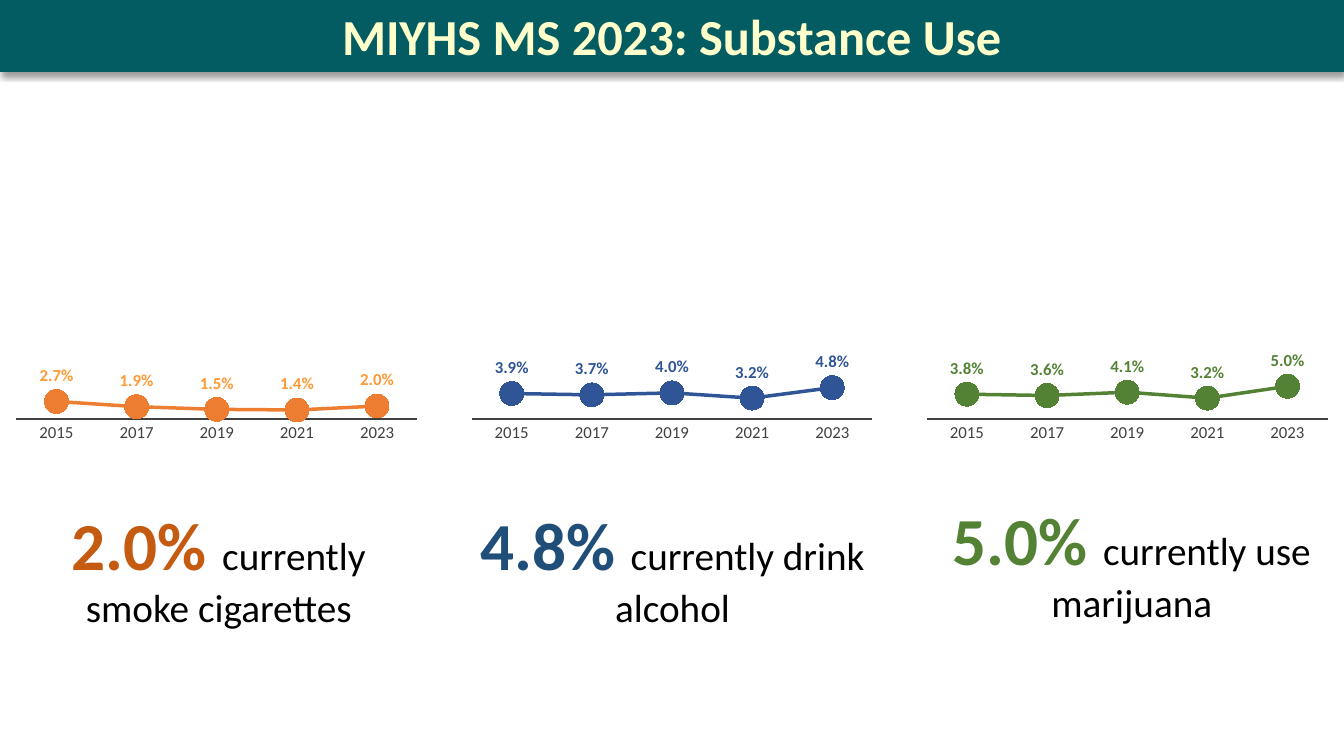
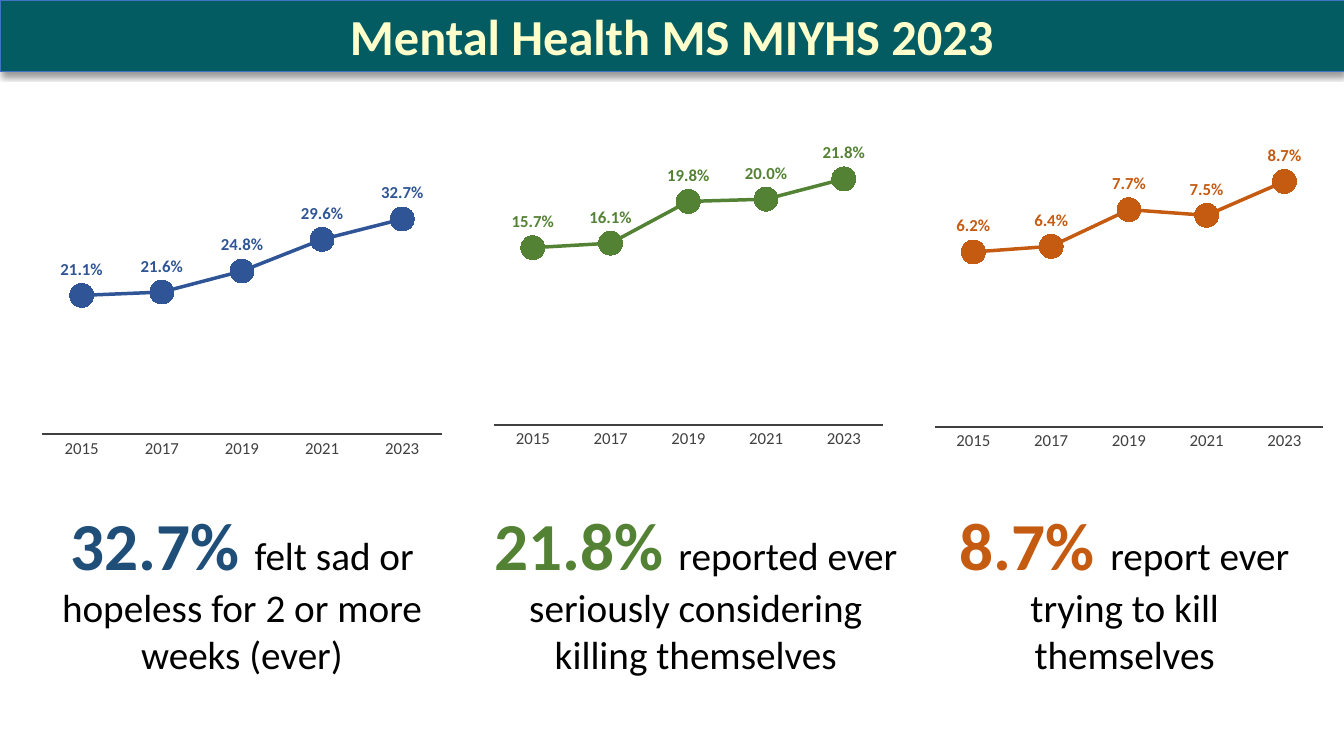
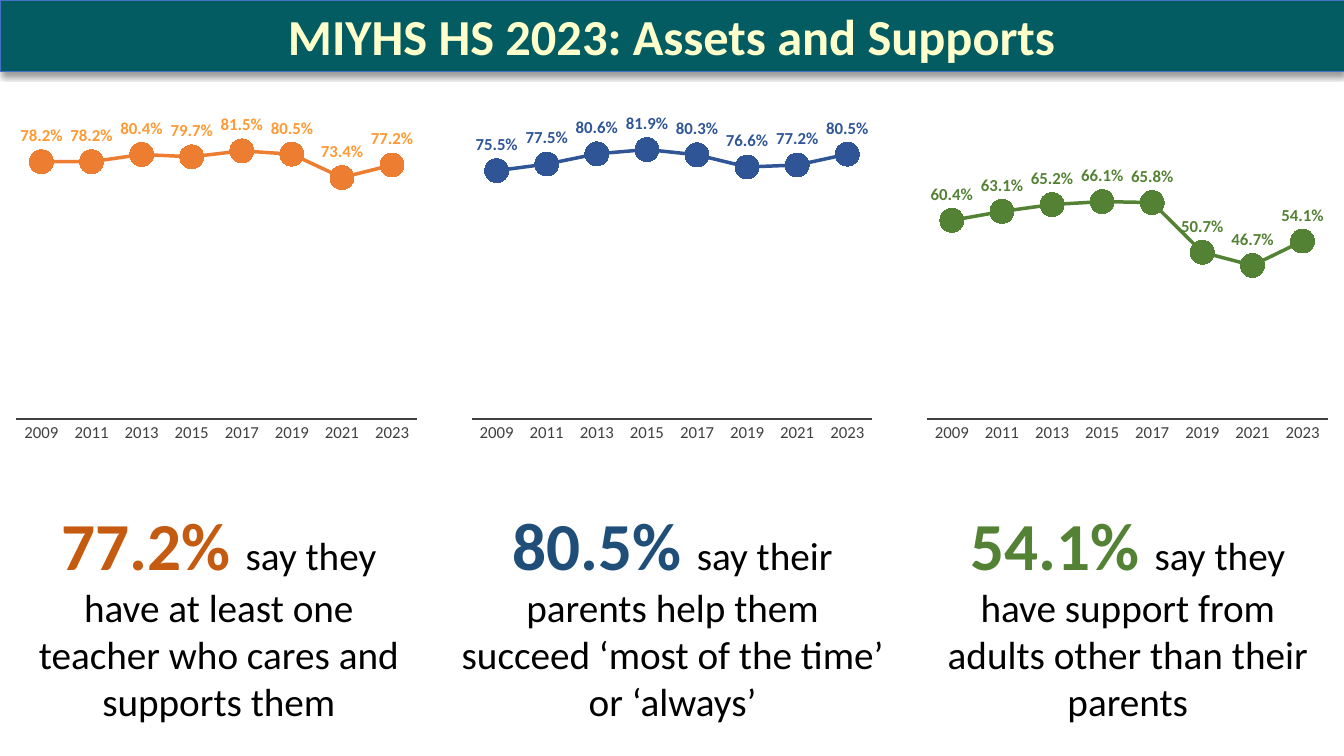
from pptx import Presentation
from pptx import util as u
from pptx.chart.data import CategoryChartData
from pptx.dml.color import RGBColor
from pptx.enum import chart as ch, shapes, text
from pptx.oxml import parse_xml
from pptx.oxml.ns import nsdecls, qn

# Shared look
WIDE, HIGH = 13.33, 7.5
FONT = "Calibri"
TEAL, CREAM, BLACK, GRAY, WHITE = "035C61", "FFFFCC", "000000", "404040", "FFFFFF"
BLUE, NAVY, GREEN, RUST = "2F5597", "1F4E79", "548235", "C55A11"
ORANGE, AMBER, EDGE = "ED7D31", "FF9933", "4472C4"
BAND = 0.71
LEFT, STEP, TOP = 0.08, 4.515, 0.82      # chart grid
BIG, SMALL = (4.14, 3.65), (4.16, 3.35)  # chart sizes
PLOT = dict(x=0.043, y=0.05, w=0.927, h=0.835)
BASE, LINE, PAD = 4.94, 0.47, 0.44       # caption top, line height, padding

# Content: each panel has line, label and figure colours, values in percent,
# the caption, its (left, width), and any departure from the grid
DECK = [
    dict(title="MIYHS MS 2023: Substance Use", edge=TEAL, first=2015, peak=0.5, rows=2,
         panels=[
             dict(hue=(ORANGE, AMBER, RUST), vals=[2.7, 1.9, 1.5, 1.4, 2.0],
                  note="currently smoke cigarettes", box=(0.17, 4)),
             dict(hue=(BLUE, BLUE, NAVY), vals=[3.9, 3.7, 4.0, 3.2, 4.8],
                  note="currently drink alcohol", box=(4.48, 4.38)),
             dict(hue=(GREEN, GREEN, GREEN), vals=[3.8, 3.6, 4.1, 3.2, 5.0],
                  note="currently use marijuana", box=(9.28, 3.89), base=4.89),
         ]),
    dict(title="Mental Health MS MIYHS 2023", edge=EDGE, first=2015, peak=0.5, rows=3,
         panels=[
             dict(hue=(BLUE, BLUE, NAVY), vals=[21.1, 21.6, 24.8, 29.6, 32.7],
                  note="felt sad or hopeless for 2 or more weeks (ever)",
                  box=(0.21, 4.38), spot=(0.33, 0.97)),
             dict(hue=(GREEN, GREEN, GREEN), vals=[15.7, 16.1, 19.8, 20.0, 21.8],
                  note="reported ever seriously considering killing themselves",
                  box=(4.71, 4.38), spot=(4.72, 1.25), size=SMALL, peak=0.25),
             dict(hue=(RUST, RUST, RUST), vals=[6.2, 6.4, 7.7, 7.5, 8.7],
                  note="report ever trying to kill themselves",
                  box=(9.21, 3.89), spot=(9.09, 1.27), size=SMALL, peak=0.1),
         ]),
    dict(title="MIYHS HS 2023: Assets and Supports", edge=EDGE, first=2009, peak=1, rows=4,
         panels=[
             dict(hue=(ORANGE, AMBER, RUST),
                  vals=[78.2, 78.2, 80.4, 79.7, 81.5, 80.5, 73.4, 77.2],
                  note="say they have at least one teacher who cares and supports them",
                  box=(0.17, 4)),
             dict(hue=(BLUE, BLUE, NAVY),
                  vals=[75.5, 77.5, 80.6, 81.9, 80.3, 76.6, 77.2, 80.5],
                  note="say their parents help them succeed ‘most of the time’ or ‘always’",
                  box=(4.48, 4.38)),
             dict(hue=(GREEN, GREEN, GREEN),
                  vals=[60.4, 63.1, 65.2, 66.1, 65.8, 50.7, 46.7, 54.1],
                  note="say they have support from adults other than their parents",
                  box=(9.19, 3.99)),
         ]),
]


def rgb(code):
    return RGBColor.from_string(code)


def inch(*vals):
    return [u.Inches(v) for v in vals]


def style(font, size, color, bold=False):
    font.name, font.size, font.bold = FONT, u.Pt(size), bold
    font.color.rgb = rgb(color)


def write(frame, words, **form):
    """Add a run to the frame's centred paragraph."""
    para = frame.paragraphs[0]
    para.alignment = text.PP_ALIGN.CENTER
    run = para.add_run()
    run.text = words
    style(run.font, **form)


def stroke(line, color, width):
    line.color.rgb = rgb(color)
    line.width = u.Pt(width)


def banner(slide, title, edge):
    bar = slide.shapes.add_shape(shapes.MSO_SHAPE.RECTANGLE, *inch(0, 0, WIDE, BAND))
    bar.fill.solid()
    bar.fill.fore_color.rgb = rgb(TEAL)
    stroke(bar.line, edge, 0.5)
    bar.shadow.inherit = False
    glow = bar._element.spPr.find(qn("a:effectLst"))
    glow.append(parse_xml(
        f'<a:outerShdw {nsdecls("a")} blurRad="{u.Pt(4)}" dist="{u.Pt(3)}" dir="5400000" '
        'algn="t" rotWithShape="0"><a:srgbClr val="000000"><a:alpha val="40000"/>'
        '</a:srgbClr></a:outerShdw>'))
    frame = bar.text_frame
    frame.word_wrap = True
    frame.vertical_anchor = text.MSO_ANCHOR.MIDDLE
    write(frame, title, size=36, color=CREAM, bold=True)


def trend(slide, spot, size, first, vals, hue, peak):
    data = CategoryChartData(number_format="0.0%")
    data.categories = [str(first + 2 * i) for i in range(len(vals))]
    data.add_series("Series 1", [round(v / 100, 3) for v in vals])
    chart = slide.shapes.add_chart(
        ch.XL_CHART_TYPE.LINE_MARKERS, *inch(*spot, *size), data).chart
    chart.has_legend = chart.has_title = False
    style(chart.font, 10, BLACK)

    # Axes
    years, scale = chart.category_axis, chart.value_axis
    years.major_tick_mark = years.minor_tick_mark = ch.XL_TICK_MARK.NONE
    style(years.tick_labels.font, 12, GRAY)
    stroke(years.format.line, GRAY, 1.5)
    scale.visible = scale.has_major_gridlines = False
    scale.minimum_scale, scale.maximum_scale = 0, peak

    # Line, markers and labels
    plot = chart.plots[0]
    plot.vary_by_categories = False
    line = plot.series[0]
    line.smooth = False
    stroke(line.format.line, hue[0], 2.5)
    mark = line.marker
    mark.style, mark.size = ch.XL_MARKER_STYLE.CIRCLE, 17
    mark.format.fill.solid()
    mark.format.fill.fore_color.rgb = rgb(hue[0])
    stroke(mark.format.line, hue[0], 0.75)
    tags = line.data_labels
    tags.show_value = True
    tags.position = ch.XL_LABEL_POSITION.ABOVE
    tags.number_format, tags.number_format_is_linked = "0.0%", False
    style(tags.font, 12, hue[1], True)

    # White chart area, and a fixed plot area in the small charts
    root = chart._chartSpace
    root.find(qn("c:chart")).addnext(parse_xml(
        f'<c:spPr {nsdecls("c", "a")}><a:solidFill><a:srgbClr val="{WHITE}"/></a:solidFill>'
        '<a:ln><a:noFill/></a:ln></c:spPr>'))
    if size == SMALL:
        area = root.find(qn("c:chart")).find(qn("c:plotArea"))
        for old in area.findall(qn("c:layout")):
            area.remove(old)
        modes = '<c:xMode val="edge"/><c:yMode val="edge"/>'
        parts = "".join(f'<c:{k} val="{v}"/>' for k, v in PLOT.items())
        area.insert(0, parse_xml(
            f'<c:layout {nsdecls("c")}><c:manualLayout><c:layoutTarget val="inner"/>'
            f'{modes}{parts}</c:manualLayout></c:layout>'))


def caption(slide, left, width, top, rows, value, note, color):
    box = slide.shapes.add_textbox(*inch(left, top, width, rows * LINE + PAD))
    frame = box.text_frame
    frame.word_wrap = True
    frame.auto_size = text.MSO_AUTO_SIZE.SHAPE_TO_FIT_TEXT
    write(frame, f"{value:.1f}% ", size=48, color=color, bold=True)
    write(frame, note, size=28, color=BLACK)


def main():
    deck = Presentation()
    deck.slide_width, deck.slide_height = inch(WIDE, HIGH)
    for page in DECK:
        slide = deck.slides.add_slide(deck.slide_layouts[6])
        banner(slide, page["title"], page["edge"])
        for col, part in enumerate(page["panels"]):
            vals, hue = part["vals"], part["hue"]
            trend(slide, part.get("spot", (LEFT + col * STEP, TOP)), part.get("size", BIG),
                  page["first"], vals, hue, part.get("peak", page["peak"]))
            caption(slide, *part["box"], part.get("base", BASE), page["rows"],
                    vals[-1], part["note"], hue[2])
    deck.save("out.pptx")


if __name__ == "__main__":
    main()
